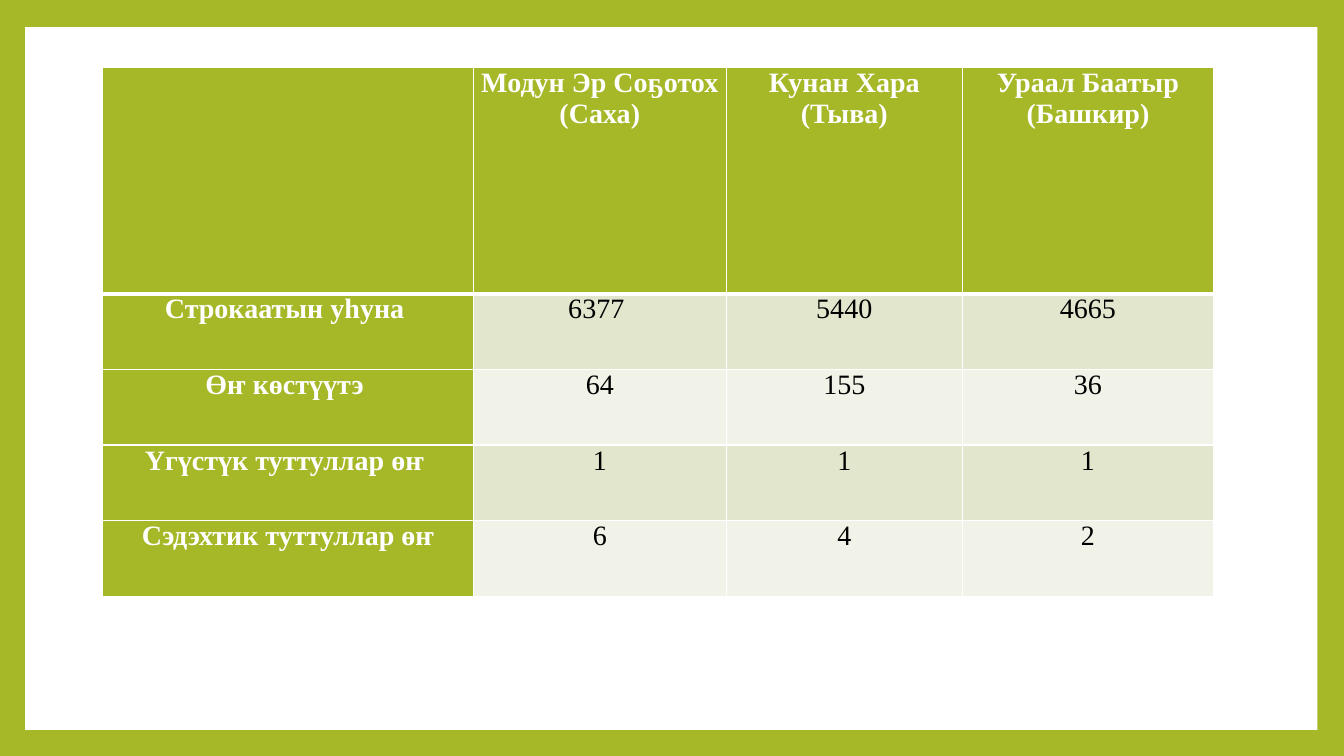
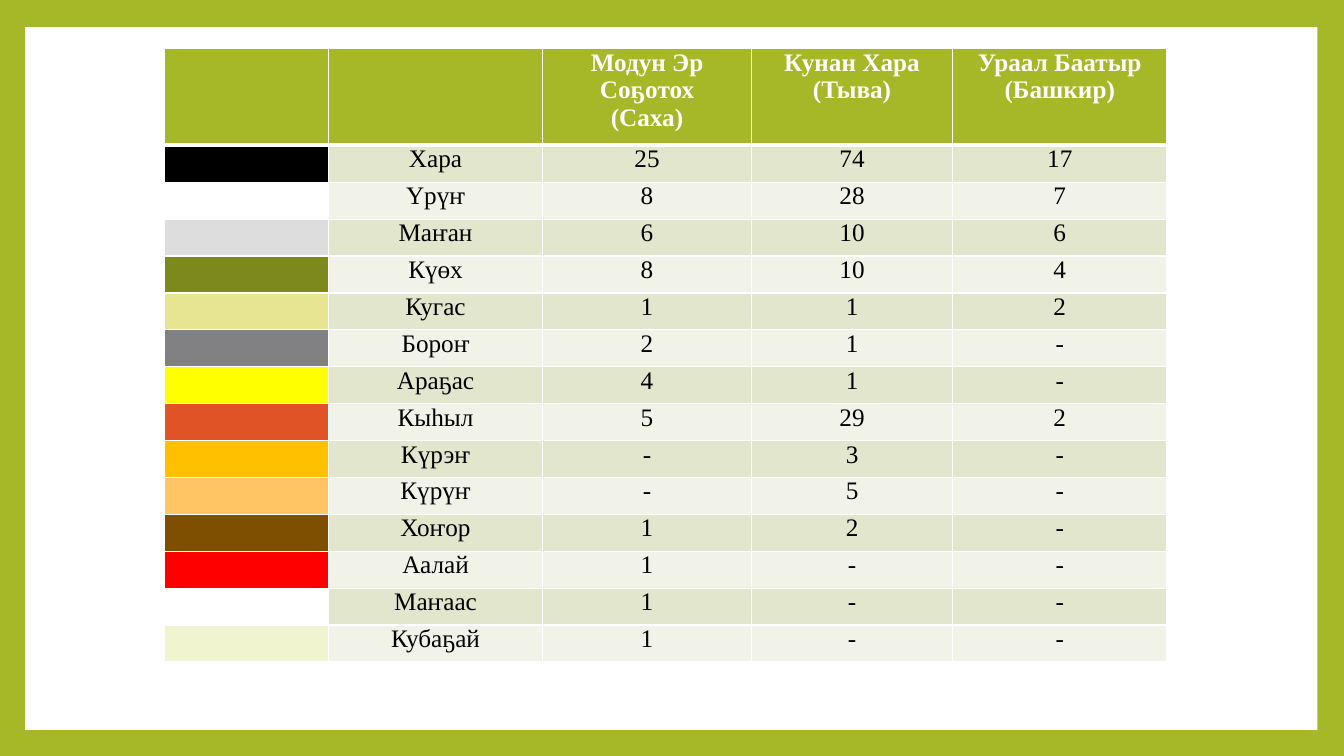
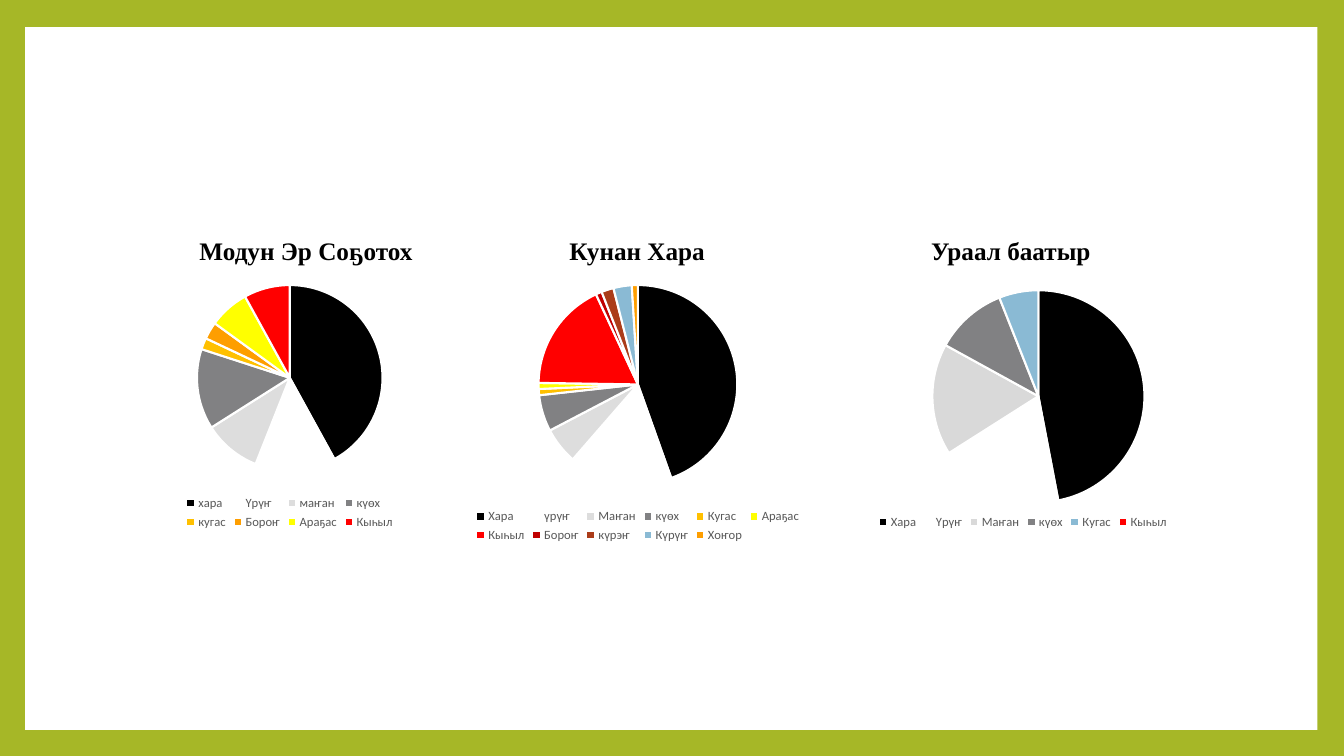
from lxml import etree
from pptx import Presentation
from pptx.chart.data import CategoryChartData
from pptx.dml.color import RGBColor
from pptx.enum import chart as charts, shapes, text
from pptx.oxml import parse_xml
from pptx.oxml.ns import nsdecls, qn
from pptx.util import Pt

# Shared look
GREEN, WHITE, BLACK, GREY = "A6B727", "FFFFFF", "000000", "595959"
BANDS = ("E1E6CD", "F1F3E8")
SERIF, SANS = "Times New Roman", "Calibri"
PANEL = (18, 19.3, 923, 502)

# Content
EPICS = ["Модун Эр Соҕотох\n(Саха)", "Кунан Хара\n(Тыва)", "Ураал Баатыр\n(Башкир)"]
SUMMARY = [
    ["Строкаатын уһуна ", "6377 ", "5440", "4665"],
    ["Өҥ көстүүтэ ", "64", "155", "36"],
    ["Үгүстүк туттуллар өҥ ", "1", "1", "1"],
    ["Сэдэхтик туттуллар өҥ", "6", "4", "2"],
]
COLOUR_COUNTS = [
    ("000000", "Хара", "25", "74", "17"),
    ("FFFFFF", "Үрүҥ", "8", "28", "7"),
    ("DDDDDD", "Маҥан", "6", "10", "6"),
    ("7D891D", "Күөх", "8", "10", "4"),
    ("E7E591", "Кугас", "1", "1", "2"),
    ("818183", "Бороҥ", "2", "1", "-"),
    ("FFFF00", "Араҕас", "4", "1", "-"),
    ("DF5327", "Кыһыл", "5", "29", "2"),
    ("FFC000", "Күрэҥ", "-", "3", "-"),
    ("FFC565", "Күрүҥ", "-", "5", "-"),
    ("7F4F00", "Хоҥор", "1", "2", "-"),
    ("FF0000", "Аалай", "1", "-", "-"),
    ("FFFFFF", "Маҥаас", "1", "-", "-"),
    ("F0F5D0", "Кубаҕай", "1", "-", "-"),
]
TABLES = [
    {"at": (73.5, 48.4), "widths": (264.6, 180.7, 168.6, 179.6), "heights": (161.5, 54),
     "size": 20, "header": [""] + EPICS, "rows": SUMMARY,
     "first_fills": [GREEN] * len(SUMMARY)},
    {"at": (117.7, 34.7), "widths": (117, 152.9, 149.3, 143.6, 153.2), "heights": (69.1, 26.38),
     "size": 18, "header": ["", ""] + EPICS, "rows": [["", *row[1:]] for row in COLOUR_COUNTS],
     "first_fills": [row[0] for row in COLOUR_COUNTS]},
]
PIES = [
    {"title": "Модун Эр Соҕотох", "title_left": 135.4, "at": (90, 193.7, 234, 187.2),
     "slices": [("хара", 42, "000000"), ("Үрүҥ", 14, "FFFFFF"), ("маҥан", 10, "DDDDDD"),
                ("күөх", 14, "818183"), ("кугас", 2, "FFC000"), ("Бороҥ", 3, "FE9E00"),
                ("Араҕас", 7, "FFFF00"), ("Кыһыл", 8, "FF0000")]},
    {"title": "Кунан Хара", "title_left": 399.6, "at": (311, 193.7, 289.4, 196.6),
     "slices": [("Хара", 45, "000000"), ("үрүҥ", 17, "FFFFFF"), ("Маҥан", 6, "DDDDDD"),
                ("күөх", 6, "818183"), ("Кугас", 1, "FFC000"), ("Араҕас", 1, "FFFF00"),
                ("Кыһыл", 18, "FF0000"), ("Бороҥ", 1, "C00000"), ("күрэҥ", 2, "AB3C19"),
                ("Күрүҥ", 3, "8ABAD4"), ("Хоҥор", 1, "FE9E00")]},
    {"title": "Ураал баатыр", "title_left": 658, "at": (555.8, 184.3, 349.9, 196.6),
     "plot": {"x": 0.315, "y": 0.117, "w": 0.433, "h": 0.771},
     "slices": [("Хара", 47, "000000"), ("Үрүҥ", 19, "FFFFFF"), ("Маҥан", 17, "D9D9D9"),
                ("күөх", 11, "818183"), ("Кугас", 6, "8ABAD4"), ("Кыһыл", None, "FF0000")]},
]


def colour(value):
    return RGBColor.from_string(value)


def paint(fill, value):
    fill.solid()
    fill.fore_color.rgb = colour(value)


def style_font(font, value, **settings):
    for name, setting in settings.items():
        setattr(font, name, setting)
    font.color.rgb = colour(value)


def set_borders(cell, top, bottom):
    sides = {"lnL": 1, "lnR": 1, "lnT": top, "lnB": bottom}
    properties = cell._tc.get_or_add_tcPr()
    for index, (side, width) in enumerate(sides.items()):
        properties.insert(index, parse_xml(
            f'<a:{side} {nsdecls("a")} w="{Pt(width)}"><a:solidFill>'
            f'<a:srgbClr val="{WHITE}"/></a:solidFill></a:{side}>'))


def fill_cell(cell, words, fill, size, bold):
    settings = {"margin_left": Pt(5), "margin_right": Pt(5), "margin_top": 0, "margin_bottom": 0}
    for name, setting in settings.items():
        setattr(cell, name, setting)
    paint(cell.fill, fill)
    cell.text = words
    for para in cell.text_frame.paragraphs:
        para.alignment = text.PP_ALIGN.CENTER
        for span in para.runs:
            style_font(span.font, WHITE if bold else BLACK, name=SERIF, size=Pt(size), bold=bold)


def add_grid(page, layout):
    rows = [layout["header"], *layout["rows"]]
    widths, (header_height, row_height) = layout["widths"], layout["heights"]
    heights = [header_height] + [row_height] * len(layout["rows"])
    table = page.shapes.add_table(
        len(rows), len(widths), *map(Pt, (*layout["at"], sum(widths), sum(heights)))).table
    table.first_row = table.horz_banding = False
    for column, width in zip(table.columns, widths):
        column.width = Pt(width)
    for r, (words, height) in enumerate(zip(rows, heights)):
        table.rows[r].height = Pt(height)
        for c, word in enumerate(words):
            first = c == 0
            if r == 0:
                fill = GREEN
            elif first:
                fill = layout["first_fills"][r - 1]
            else:
                fill = BANDS[(r - 1) % 2]
            fill_cell(table.cell(r, c), word, fill, layout["size"], r == 0 or first)
            set_borders(table.cell(r, c), 3 if r == 1 else 1, 3 if r == 0 else 1)


def place_plot(chart, plot):
    area = chart._chartSpace.chart.plotArea
    for old in area.findall(qn("c:layout")):
        area.remove(old)
    layout = etree.Element(qn("c:layout"))
    manual = etree.SubElement(layout, qn("c:manualLayout"))
    values = {"layoutTarget": "inner", "xMode": "edge", "yMode": "edge", **plot}
    for name, value in values.items():
        etree.SubElement(manual, qn(f"c:{name}")).set("val", str(value))
    area.insert(0, layout)


def add_pie(page, pie):
    names, values, fills = zip(*pie["slices"])
    data = CategoryChartData()
    data.categories = names
    data.add_series("Series 1", values)
    chart = page.shapes.add_chart(charts.XL_CHART_TYPE.PIE, *map(Pt, pie["at"]), data).chart
    chart.has_title = False
    style_font(chart.font, BLACK, name=SANS, size=Pt(10))
    chart.has_legend = True
    chart.legend.position = charts.XL_LEGEND_POSITION.BOTTOM
    chart.legend.include_in_layout = False
    style_font(chart.legend.font, GREY, name=SANS, size=Pt(9))
    chart.plots[0].vary_by_categories = True
    for index, fill in enumerate(fills):
        slice_format = chart.plots[0].series[0].points[index].format
        paint(slice_format.fill, fill)
        slice_format.line.width = Pt(1.5)
        slice_format.line.color.rgb = colour(WHITE)
    if "plot" in pie:
        place_plot(chart, pie["plot"])


def add_heading(page, words, left):
    box = page.shapes.add_textbox(Pt(left), Pt(164.2), Pt(180), Pt(29))
    box.text_frame.word_wrap = True
    span = box.text_frame.paragraphs[0].add_run()
    span.text = words
    style_font(span.font, BLACK, name=SERIF, size=Pt(18), bold=True)


def set_master(deck, page):
    """Give every slide the green frame and white panel."""
    master = deck.slide_master
    paint(master.background.fill, GREEN)
    panel = page.shapes.add_shape(shapes.MSO_SHAPE.RECTANGLE, *map(Pt, PANEL))
    panel.shadow.inherit = False
    paint(panel.fill, WHITE)
    panel.line.fill.background()
    master.shapes.element.insert(2, panel.element)


def main():
    deck = Presentation()
    deck.slide_width, deck.slide_height = Pt(960), Pt(540)
    pages = [deck.slides.add_slide(deck.slide_layouts[6]) for _ in range(3)]
    set_master(deck, pages[0])

    # Comparison tables
    for page, layout in zip(pages, TABLES):
        add_grid(page, layout)

    # Pie charts with headings
    for pie in PIES:
        add_pie(pages[2], pie)
    for pie in PIES:
        add_heading(pages[2], pie["title"], pie["title_left"])

    deck.save("out.pptx")


if __name__ == "__main__":
    main()
